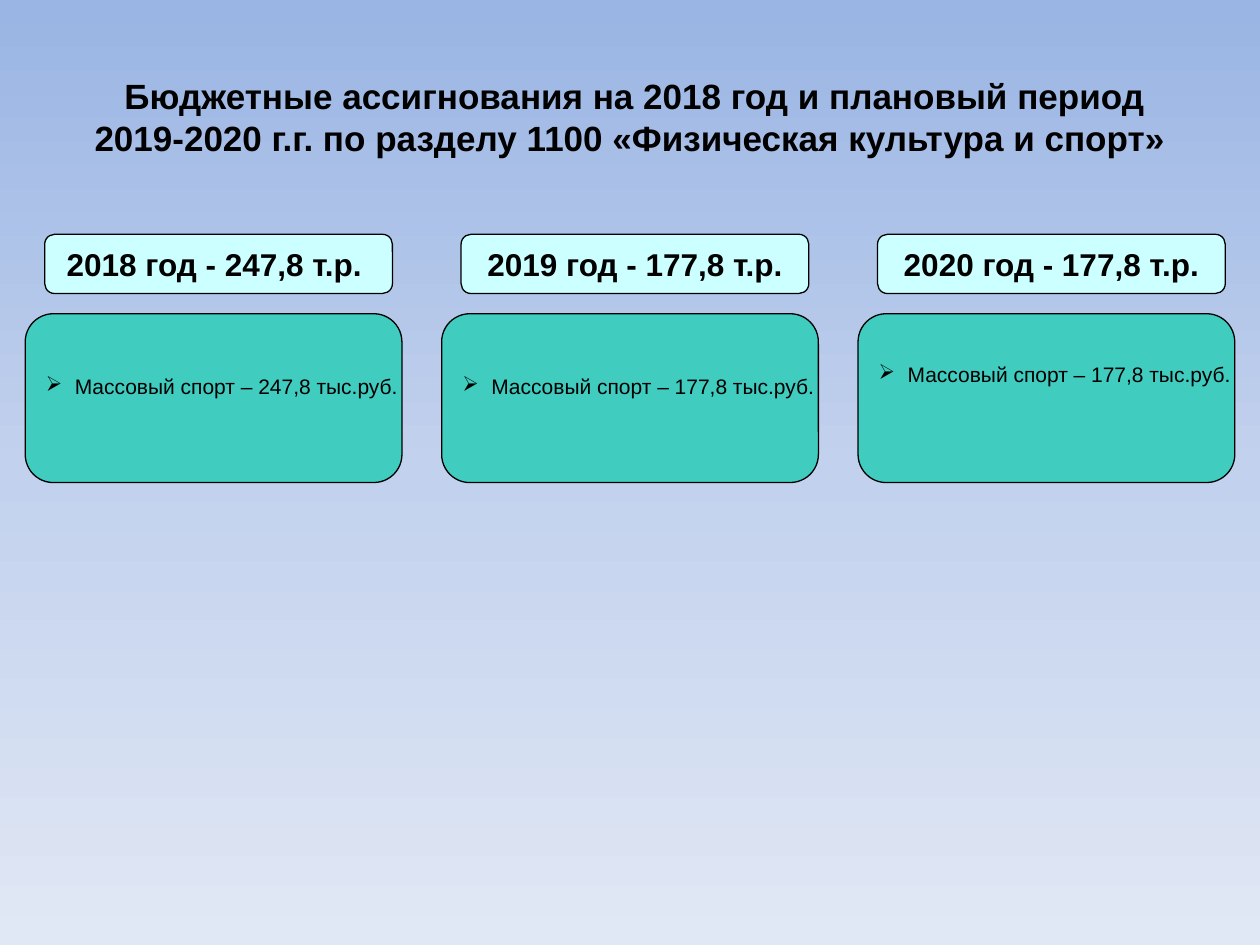
from copy import deepcopy
from dataclasses import dataclass

from pptx import Presentation
from pptx import util as u
from pptx.dml.color import RGBColor
from pptx.enum import shapes, text
from pptx.oxml import ns
from pptx.oxml.xmlchemy import OxmlElement


@dataclass(frozen=True)
class Theme:
    font: str = "Arial"
    ink: str = "000000"
    heading_fill: str = "CCFFFF"
    detail_fill: str = "40CCBF"
    backdrop: tuple = ("9AB5E4", "C2D1ED", "E1E8F5")
    title_size: int = 20
    heading_size: int = 18
    detail_size: int = 12
    line_width: float = 0.75


class BudgetPage:
    """Hold the theme and the current slide and add its kinds of element."""

    def __init__(self, deck, theme):
        self.theme = theme
        self.page = deck.slides.add_slide(deck.slide_layouts[5])

    def backdrop(self):
        fill = self.page.background.fill
        fill.gradient()
        fill.gradient_angle = 270
        stops = next(self.page.element.iter(ns.qn("a:gsLst")))
        stops.insert(1, deepcopy(stops[0]))
        colors = self.theme.backdrop
        for index, (stop, color) in enumerate(zip(fill.gradient_stops, colors)):
            stop.position = index / (len(colors) - 1)
            stop.color.rgb = RGBColor.from_string(color)

    def style(self, para, size, bold=False):
        para.font.name = self.theme.font
        para.font.size = u.Pt(size)
        para.font.bold = bold
        para.font.color.rgb = RGBColor.from_string(self.theme.ink)

    def title(self, words, left, top, width, height):
        box = self.page.shapes.title
        box.left, box.top, box.width, box.height = map(u.Inches, (left, top, width, height))
        frame = box.text_frame
        frame.text = words
        frame.word_wrap = True
        frame.auto_size = text.MSO_AUTO_SIZE.NONE
        frame.vertical_anchor = text.MSO_ANCHOR.MIDDLE
        para = frame.paragraphs[0]
        para.alignment = text.PP_ALIGN.CENTER
        self.style(para, self.theme.title_size, bold=True)

    def card(self, words, left, top, width, height, fill):
        box = self.page.shapes.add_shape(
            shapes.MSO_SHAPE.ROUNDED_RECTANGLE, *map(u.Inches, (left, top, width, height)))
        box.shadow.inherit = False
        box.fill.solid()
        box.fill.fore_color.rgb = RGBColor.from_string(fill)
        box.line.color.rgb = RGBColor.from_string(self.theme.ink)
        box.line.width = u.Pt(self.theme.line_width)
        frame = box.text_frame
        frame.text = words
        frame.word_wrap = False
        frame.vertical_anchor = text.MSO_ANCHOR.MIDDLE
        return frame

    def heading(self, words, left, top, width, height):
        frame = self.card(words, left, top, width, height, self.theme.heading_fill)
        para = frame.paragraphs[0]
        para.alignment = text.PP_ALIGN.CENTER
        self.style(para, self.theme.heading_size, bold=True)

    def detail(self, words, left, top, width, height, lift):
        frame = self.card(words, left, top, width, height, self.theme.detail_fill)
        frame.margin_bottom = u.Inches(0.05 + lift)
        para = frame.paragraphs[0]
        para.alignment = text.PP_ALIGN.LEFT
        properties = para._p.get_or_add_pPr()
        indent = u.Inches(0.23)
        properties.set("marL", str(indent))
        properties.set("indent", str(-indent))
        bullet = OxmlElement("a:buChar")
        bullet.set("char", "➢")
        properties.append(bullet)
        self.style(para, self.theme.detail_size)


def main():
    deck = Presentation()
    deck.slide_width, deck.slide_height = u.Inches(10), u.Inches(7.5)
    budget = BudgetPage(deck, Theme())
    budget.backdrop()
    budget.title(" Бюджетные ассигнования на 2018 год и плановый период "
                 "2019-2020 г.г. по разделу 1100 «Физическая культура и спорт»",
                 0.5, 0.3, 9, 1.25)

    years = [
        ("2018 год - 247,8 т.р. ", "247,8", 0.19),
        ("2019 год - 177,8 т.р.", "177,8", 0.19),
        ("2020 год - 177,8 т.р.", "177,8", 0.38),
    ]
    for column, (heading, amount, lift) in enumerate(years):
        left = 0.2 + column * 3.305
        budget.heading(heading, left + 0.155, 1.86, 2.76, 0.47)
        budget.detail(f"Массовый спорт – {amount} тыс.руб.", left, 2.49, 2.99, 1.34, lift)
    deck.save("out.pptx")


if __name__ == "__main__":
    main()
